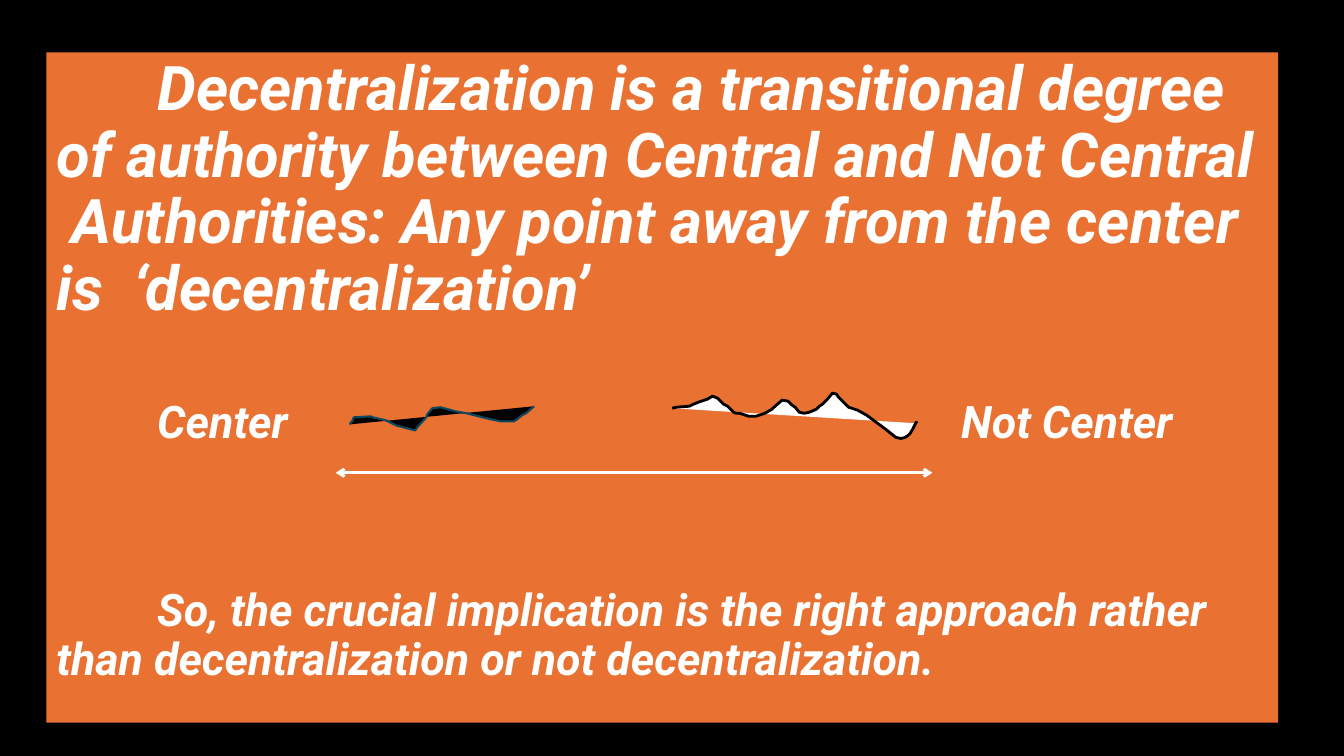
from lxml.etree import SubElement
from pptx import Presentation
from pptx.dml.color import RGBColor
from pptx.enum.shapes import MSO_CONNECTOR as Connector
from pptx.enum.text import MSO_ANCHOR as Anchor, MSO_AUTO_SIZE as AutoSize, PP_ALIGN as Align
from pptx.oxml.ns import qn
from pptx.util import Pt

COLORS = {"black": "000000", "orange": "E97132", "white": "FFFFFF", "teal": "104760"}
FONT = {"name": "Roboto", "bold": True, "italic": True}
PARAGRAPH = {"alignment": Align.LEFT, "line_spacing": 0.9, "space_before": Pt(0), "space_after": Pt(0)}
FRAME = {"word_wrap": True, "auto_size": AutoSize.NONE, "vertical_anchor": Anchor.TOP}
INSET = 7.2
FIRST_LINE_INDENT = 72
HUNDREDTH_INCH = 0.72

HEADLINE = (
    "Decentralization is a transitional degree of authority between Central and Not Central  "
    "Authorities: Any point away from the center is  ‘decentralization’"
)
CONCLUSION = (
    "So, the crucial implication is the right approach rather than "
    "decentralization or not decentralization."
)

CENTER_WAVE = [
    (183, 0), (175, 7), (171, 9), (166, 13), (163, 15), (150, 15), (136, 12), (116, 7),
    (105, 5), (90, 1), (82, 2), (77, 8), (76, 11), (67, 21), (65, 24), (46, 19), (36, 14),
    (23, 11), (21, 10), (4, 11), (3, 14), (0, 18),
]
NOT_CENTER_WAVE = [
    (0, 15), (4, 14), (17, 13), (21, 11), (26, 9), (35, 6), (40, 3), (45, 5), (51, 11),
    (55, 13), (61, 19), (63, 20), (67, 20), (76, 23), (83, 23), (89, 21), (92, 20),
    (99, 16), (101, 14), (109, 7), (115, 8), (119, 12), (122, 14), (126, 19), (131, 20),
    (136, 19), (143, 16), (146, 13), (149, 11), (154, 6), (159, 0), (163, 1), (165, 4),
    (175, 14), (184, 17), (193, 22), (212, 36), (217, 40), (222, 44), (227, 45), (231, 44),
    (234, 42), (236, 40), (239, 35), (242, 29), (243, 30),
]


def color(name):
    return RGBColor.from_string(COLORS[name])


def apply_format(target, values):
    for name, value in values.items():
        setattr(target, name, value)


def write_text(shape, text, size, inset=0, indent=0):
    frame = shape.text_frame
    apply_format(frame, FRAME)
    apply_format(frame, {
        "margin_left": Pt(inset), "margin_right": Pt(inset),
        "margin_top": Pt(inset / 2), "margin_bottom": Pt(inset / 2),
    })
    paragraph = frame.paragraphs[0]
    apply_format(paragraph, PARAGRAPH)
    properties = paragraph._p.get_or_add_pPr()
    properties.set("marL", "0")
    properties.set("indent", str(Pt(indent)))
    SubElement(properties, qn("a:buNone"))
    run = paragraph.add_run()
    run.text = text
    apply_format(run.font, {**FONT, "size": Pt(size)})
    run.font.color.rgb = color("white")


def add_label(slide, text, left, top, width, height, indent=0):
    label = slide.shapes.add_textbox(Pt(left), Pt(top), Pt(width), Pt(height))
    write_text(label, text, 32, indent=indent)


def add_panel(slide, left, top, width, height):
    panel = slide.placeholders[1]
    apply_format(panel, {
        "left": Pt(left), "top": Pt(top), "width": Pt(width), "height": Pt(height),
    })
    panel.fill.solid()
    panel.fill.fore_color.rgb = color("orange")
    write_text(panel, HEADLINE, 44, INSET, FIRST_LINE_INDENT)


def add_wave(slide, points, left, top, fill, outline, weight):
    builder = slide.shapes.build_freeform(*points[0], scale=Pt(HUNDREDTH_INCH))
    builder.add_line_segments(points[1:], close=False)
    wave = builder.convert_to_shape(Pt(left), Pt(top))
    wave.shadow.inherit = False
    wave.fill.solid()
    wave.fill.fore_color.rgb = color(fill)
    wave.line.color.rgb = color(outline)
    wave.line.width = Pt(weight)


def add_double_arrow(slide, left, right, y):
    arrow = slide.shapes.add_connector(Connector.STRAIGHT, Pt(right), Pt(y), Pt(left), Pt(y))
    arrow.line.color.rgb = color("white")
    arrow.line.width = Pt(2)
    line = arrow.line._get_or_add_ln()
    for end in ("a:headEnd", "a:tailEnd"):
        SubElement(line, qn(end), type="arrow")
    SubElement(arrow._element.spPr, qn("a:effectLst"))


def add_spectrum(slide, left, top, width):
    add_label(slide, "Center", left + 79.2, top + 4.9, 120, 40)
    add_label(slide, "Not Center", left + 653.4, top + 4.9, width - 653.4, 40)
    add_double_arrow(slide, left + 206.7, left + 632.9, top + 56.9)
    add_wave(slide, NOT_CENTER_WAVE, left + 447.1, top, "white", "black", 2)
    add_wave(slide, CENTER_WAVE, left + 216.7, top + 9.4, "black", "teal", 1.5)


def build_decentralization_slide(presentation):
    slide = presentation.slides.add_slide(presentation.slide_layouts[1])
    title = slide.shapes.title._element
    title.getparent().remove(title)
    slide.background.fill.solid()
    slide.background.fill.fore_color.rgb = color("black")
    left, top, width, height = 33.1, 37.4, 879.8, 478.8
    add_panel(slide, left, top, width, height)
    add_spectrum(slide, left, top + 243.4, width)
    add_label(slide, CONCLUSION, left + INSET, top + 382.6, width - 2 * INSET, 75, FIRST_LINE_INDENT)


def main():
    presentation = Presentation()
    presentation.slide_width = Pt(960)
    presentation.slide_height = Pt(540)
    build_decentralization_slide(presentation)
    presentation.save("out.pptx")


if __name__ == "__main__":
    main()
